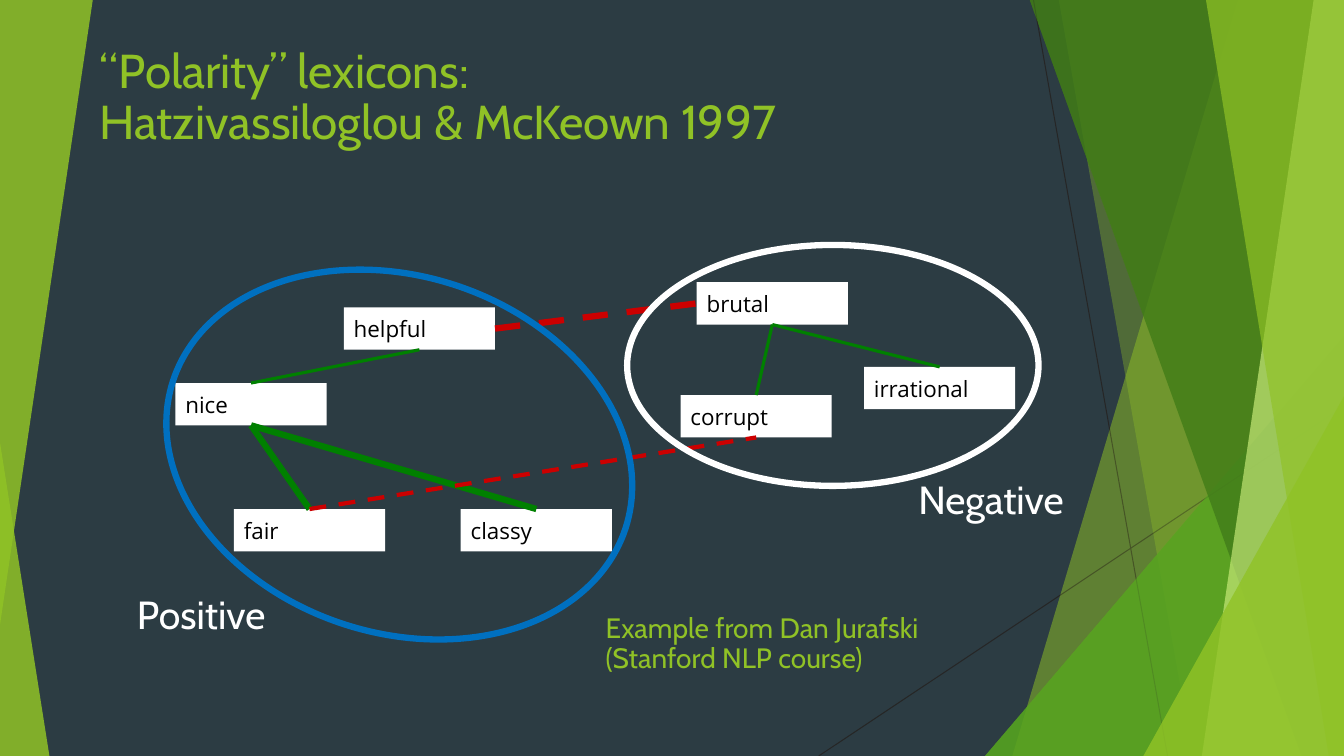
"""Build the slide on polarity lexicons with two clusters of linked adjectives."""
from dataclasses import dataclass

from lxml import etree
from pptx import Presentation
from pptx import util as u
from pptx.dml import color
from pptx.enum import dml, shapes, text
from pptx.oxml import ns

WIDE, HIGH = 13.33, 7.5
LIME, WHITE, GREEN, RED = "90C226", "FFFFFF", "008000", "CC0000"
TOP, LEFT, FOOT, RIGHT = range(4)
KIND = shapes.MSO_SHAPE


@dataclass
class Sheet:
    top: float
    foot_right: float
    foot: float
    tint: str
    alpha: int


@dataclass
class Wedge:
    box: tuple[float, float, float, float]
    tip: float
    tint: str
    alpha: int
    turn: int = 0


@dataclass
class Word:
    name: str
    x: float
    y: float


@dataclass
class Link:
    start: str
    out: int
    end: str
    into: int
    tint: str
    width: float


@dataclass
class Ring:
    box: tuple[float, float, float, float]
    tint: str
    turn: int = 0


@dataclass
class Label:
    box: tuple[float, float, float, float]
    lines: list[str]
    size: int
    tint: str
    low: bool = False


SHEETS_LOW = [
    Sheet(12.28, WIDE, 10.04, LIME, 30),
    Sheet(10.5, WIDE, 11.83, LIME, 20),
]
SHEETS_HIGH = [
    Sheet(10.21, WIDE, 12.91, "3F7819", 70),
    Sheet(13.03, WIDE, 11.92, "C0E474", 70),
    Sheet(11.96, WIDE, 13.18, LIME, 65),
]
FAN = [
    *SHEETS_LOW,
    Wedge((9.77, 3.33, 3.56, 4.17), 1, "54A021", 72),
    *SHEETS_HIGH,
    Wedge((11.34, 3.93, 1.99, 3.57), 1, LIME, 80),
]
LOW_EDGE = Wedge((0, 4.39, 0.49, 3.11), 0, LIME, 85)
HIGH_EDGE = Wedge((0, 0, 0.92, 6.2), 1, LIME, 85, 180)
RAYS = [(10.25, 0, 11.58, HIGH), (WIDE, 4.03, 8.12, HIGH)]

WORDS = [
    Word("classy", 4.57, 5.05),
    Word("nice", 1.74, 3.8),
    Word("helpful", 3.41, 3.05),
    Word("fair", 2.32, 5.05),
    Word("brutal", 6.91, 2.8),
    Word("irrational", 8.57, 3.64),
    Word("corrupt", 6.75, 3.92),
]
LINKS = [
    Link("brutal", FOOT, "corrupt", TOP, GREEN, 2.25),
    Link("nice", FOOT, "classy", TOP, GREEN, 4.5),
    Link("nice", FOOT, "fair", TOP, GREEN, 4.5),
    Link("fair", TOP, "corrupt", FOOT, RED, 3),
    Link("irrational", TOP, "brutal", FOOT, GREEN, 2.25),
    Link("helpful", FOOT, "nice", TOP, GREEN, 2.25),
    Link("helpful", RIGHT, "brutal", LEFT, RED, 4.5),
]
RINGS = [
    Ring((1.6, 2.74, 4.72, 3.54), "0070C0", 18),
    Ring((6.22, 2.43, 4.08, 2.39), WHITE),
]
TITLE = Label((0.89, 0.34, 9.06, 1.2),
              ["“Polarity” lexicons:\vHatzivassiloglou & McKeown 1997"], 34, LIME, True)
LABELS = [
    Label((9.01, 4.67, 2.8, 0.57), ["Negative"], 28, WHITE),
    Label((1.26, 5.81, 2.8, 0.57), ["Positive"], 28, WHITE),
    Label((5.91, 5.54, 5.1, 1.2),
          ["Example from Dan Jurafski", "(Stanford NLP course)"], 20, LIME, True),
]


def rgb(tint: str) -> color.RGBColor:
    return color.RGBColor.from_string(tint)


def paint(shape, tint: str, alpha: int = 100) -> None:
    shape.shadow.inherit = False
    shape.line.fill.background()
    shape.fill.solid()
    shape.fill.fore_color.rgb = rgb(tint)
    if alpha < 100:
        node = shape.fill._xPr.find(".//" + ns.qn("a:srgbClr"))
        etree.SubElement(node, ns.qn("a:alpha")).set("val", str(alpha * 1000))


def write(shape, lines: list[str], *, font: str, size: int, tint: str,
          anchor=text.MSO_ANCHOR.TOP, wrap: bool = True, space: float = 1.0) -> None:
    frame = shape.text_frame
    frame.word_wrap = wrap
    frame.vertical_anchor = anchor
    frame.text = "\n".join(lines)
    for para in frame.paragraphs:
        para.alignment = text.PP_ALIGN.LEFT
        para.line_spacing = space
        for run in para.runs:
            run.font.name = font
            run.font.size = u.Pt(size)
            run.font.color.rgb = rgb(tint)


def preset(slide, kind, box: tuple[float, float, float, float], turn: int = 0):
    shape = slide.shapes.add_shape(kind, *map(u.Inches, box))
    shape.rotation = turn
    return shape


def facet(slide, item: Sheet | Wedge) -> None:
    if isinstance(item, Wedge):
        shape = preset(slide, KIND.ISOSCELES_TRIANGLE, item.box, item.turn)
        shape.adjustments[0] = item.tip
    else:
        dots = [(WIDE, -0.01), (item.foot_right, HIGH), (item.foot, HIGH)]
        pen = slide.shapes.build_freeform(u.Inches(item.top), u.Inches(-0.01))
        pen.add_line_segments([(u.Inches(x), u.Inches(y)) for x, y in dots])
        shape = pen.convert_to_shape()
    paint(shape, item.tint, item.alpha)


def stroke(slide, ends: tuple[float, float, float, float], tint: str, width: float):
    line = slide.shapes.add_connector(shapes.MSO_CONNECTOR.STRAIGHT, *map(u.Inches, ends))
    line.line.color.rgb = rgb(tint)
    line.line.width = u.Pt(width)
    etree.SubElement(line._element.spPr, ns.qn("a:effectLst"))
    return line


def card(slide, word: Word):
    shape = preset(slide, KIND.RECTANGLE, (word.x, word.y, 1.5, 0.42))
    paint(shape, WHITE)
    write(shape, [word.name], font="Open Sans", size=16, tint="000000",
          anchor=text.MSO_ANCHOR.MIDDLE, wrap=False)
    return shape


def join(slide, link: Link, cards: dict) -> None:
    line = stroke(slide, (0, 0, 1, 1), link.tint, link.width)
    line.begin_connect(cards[link.start], link.out)
    line.end_connect(cards[link.end], link.into)
    if link.tint == RED:
        line.line.dash_style = dml.MSO_LINE.DASH


def circle(slide, ring: Ring) -> None:
    shape = preset(slide, KIND.OVAL, ring.box, ring.turn)
    shape.shadow.inherit = False
    shape.fill.background()
    shape.line.color.rgb = rgb(ring.tint)
    shape.line.width = u.Pt(4.5)


def caption(slide, label: Label) -> None:
    shape = slide.shapes.add_textbox(*map(u.Inches, label.box))
    anchor = text.MSO_ANCHOR.BOTTOM if label.low else text.MSO_ANCHOR.TOP
    write(shape, label.lines, font="Cabin", size=label.size, tint=label.tint,
          anchor=anchor, space=0.9 if label.low else 1.0)


def main() -> None:
    deck = Presentation()
    deck.slide_width, deck.slide_height = u.Inches(WIDE), u.Inches(HIGH)
    slide = deck.slides.add_slide(deck.slide_layouts[6])
    slide.background.fill.solid()
    slide.background.fill.fore_color.rgb = rgb("2C3C43")
    for item in [*FAN, LOW_EDGE]:
        facet(slide, item)
    for ray in RAYS:
        stroke(slide, ray, "262626", 0.75)
    for item in [*FAN, HIGH_EDGE]:
        facet(slide, item)
    caption(slide, TITLE)
    cards = {word.name: card(slide, word) for word in WORDS}
    for link in LINKS:
        join(slide, link, cards)
    for ring in RINGS:
        circle(slide, ring)
    for label in LABELS:
        caption(slide, label)
    deck.save("out.pptx")


if __name__ == "__main__":
    main()
